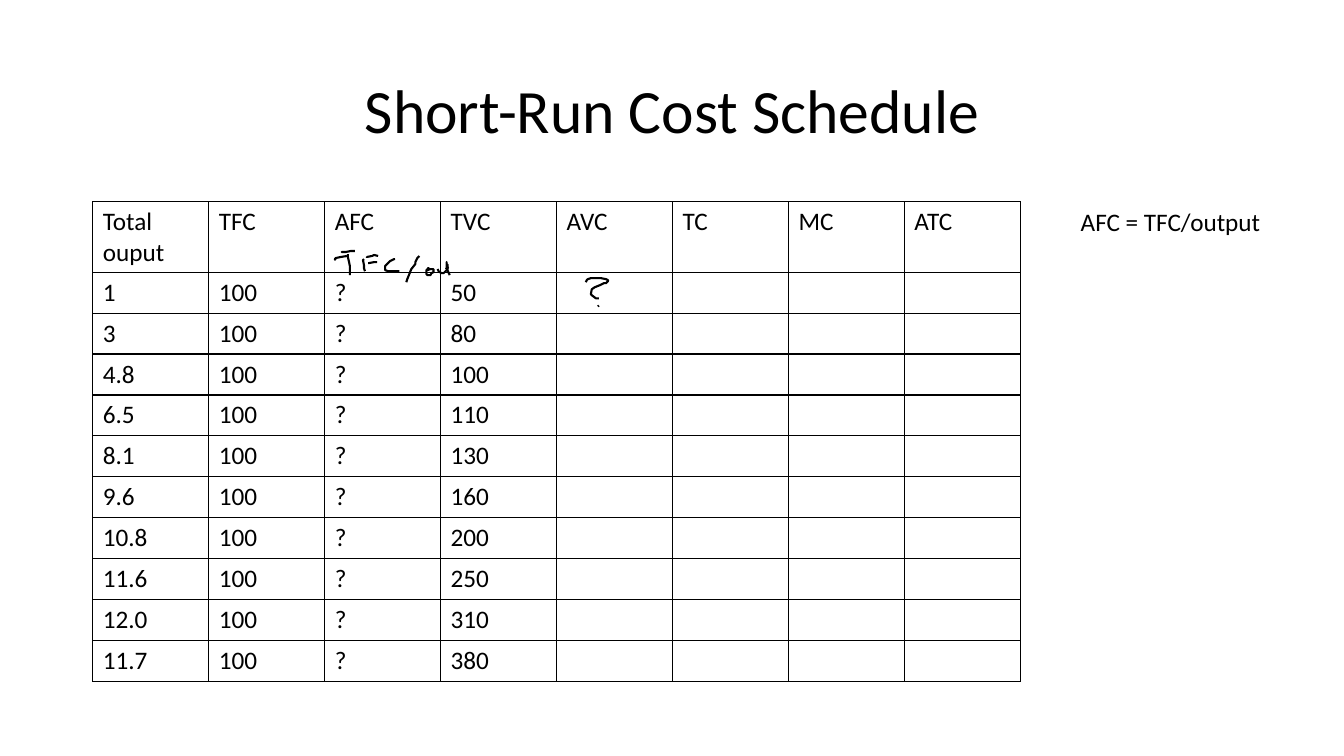
from dataclasses import dataclass
from typing import Any

from lxml.etree import SubElement
from pptx import Presentation
from pptx.dml.color import RGBColor
from pptx.enum.text import MSO_ANCHOR, PP_ALIGN
from pptx.oxml import parse_xml
from pptx.oxml.ns import nsdecls, qn
from pptx.util import Inches, Pt

COLS, ROWS = 1333, 750
HEADS = ["Total ouput", "TFC", "AFC", "TVC", "AVC", "TC", "MC", "ATC"]
OUTPUT = ["1", "3", "4.8", "6.5", "8.1", "9.6", "10.8", "11.6", "12.0", "11.7"]
COSTS = [50, 80, 100, 110, 130, 160, 200, 250, 310, 380]

QUERY = [
    [(593, 304), (594, 303)],
    [(581, 280), (582, 278), (583, 277), (586, 276), (596, 276), (601, 277),
     (603, 278), (603, 279), (601, 281), (599, 281), (595, 283), (590, 285),
     (587, 287), (586, 292), (587, 293), (591, 296), (594, 296)],
]
FORMULA = [
    [(416, 254), (414, 256), (412, 260), (412, 262), (408, 267), (406, 272),
     (404, 277), (403, 280)],
    [(425, 265), (425, 266), (423, 268), (423, 272), (424, 273), (427, 273),
     (428, 271), (430, 270), (430, 267), (427, 267), (424, 268)],
    [(361, 257), (360, 258), (361, 263), (361, 266), (362, 269)],
    [(391, 258), (391, 257), (387, 259), (386, 260), (382, 264), (382, 268),
     (385, 269), (396, 269)],
    [(442, 267), (445, 265)],
    [(434, 267), (435, 269), (436, 270), (438, 271), (440, 271), (442, 269),
     (444, 267), (444, 263), (443, 262), (443, 260), (443, 266), (446, 273)],
    [(333, 258), (332, 257), (333, 256), (338, 255), (344, 254)],
    [(345, 252), (345, 255), (346, 259), (347, 264), (347, 273)],
    [(340, 250), (339, 250), (343, 250), (348, 249), (352, 249)],
    [(365, 261), (366, 261), (371, 260), (374, 260)],
    [(364, 256), (364, 255), (369, 254), (371, 253), (375, 254)],
]


def paint(code):
    return RGBColor.from_string(code)


@dataclass
class Deck:
    slide: Any
    wide: int
    high: int
    font: str = "Calibri"
    ink: str = "000000"

    def across(self, col):
        return round(self.wide * col / COLS)

    def down(self, row):
        return round(self.high * row / ROWS)

    def frame(self, left, top, width, height):
        return (self.across(left), self.down(top),
                self.across(width), self.down(height))

    def say(self, para, words, size):
        run = para.add_run()
        run.text = words
        run.font.name = self.font
        run.font.size = Pt(size)
        run.font.color.rgb = paint(self.ink)

    def text(self, words, place, size=18, align=PP_ALIGN.LEFT,
             anchor=MSO_ANCHOR.TOP, space=1.0):
        body = self.slide.shapes.add_textbox(*self.frame(*place)).text_frame
        body.word_wrap = True
        body.vertical_anchor = anchor
        para = body.paragraphs[0]
        para.alignment = align
        para.line_spacing = space
        self.say(para, words, size)

    def border(self, cell):
        props = cell._tc.get_or_add_tcPr()
        for spot, side in enumerate(("lnL", "lnR", "lnT", "lnB")):
            edge = parse_xml(f'<a:{side} {nsdecls("a")} w="{Pt(1)}"/>')
            fill = SubElement(edge, qn("a:solidFill"))
            SubElement(fill, qn("a:srgbClr")).set("val", self.ink)
            props.insert(spot, edge)

    def table(self, lines, place, head):
        rows, cols = len(lines), len(lines[0])
        left, top, width, height = place
        grid = self.slide.shapes.add_table(
            rows, cols, *self.frame(*place)).table
        grid.first_row = grid.horz_banding = False
        for col in grid.columns:
            col.width = self.across(width / cols)
        for num, row in enumerate(grid.rows):
            row.height = self.down(
                (height - head) / (rows - 1) if num else head)
            for cell, words in zip(row.cells, lines[num]):
                cell.fill.background()
                self.border(cell)
                if words:
                    self.say(cell.text_frame.paragraphs[0], words, 18)

    def stroke(self, points):
        spots = [(self.across(x), self.down(y)) for x, y in points]
        pen = self.slide.shapes.build_freeform(*spots[0])
        pen.add_line_segments(spots[1:], close=False)
        mark = pen.convert_to_shape()
        mark.shadow.inherit = False
        mark.fill.background()
        mark.line.color.rgb = paint(self.ink)
        mark.line.width = Pt(1.5)


def main():
    show = Presentation()
    show.slide_width, show.slide_height = Inches(13.33), Inches(7.5)
    slide = show.slides.add_slide(show.slide_layouts[6])
    deck = Deck(slide, show.slide_width, show.slide_height)

    deck.text("Short-Run Cost Schedule", (92, 40, 1150, 145), 44,
              PP_ALIGN.CENTER, MSO_ANCHOR.MIDDLE, 0.9)
    lines = [HEADS] + [[made, "100", "?", str(cost)] + [""] * 4
                       for made, cost in zip(OUTPUT, COSTS)]
    deck.table(lines, (92, 200, 920, 476), 70)
    deck.text("AFC = TFC/output", (1062, 200, 232, 40))
    for points in QUERY + FORMULA:
        deck.stroke(points)

    show.save("out.pptx")


if __name__ == "__main__":
    main()
